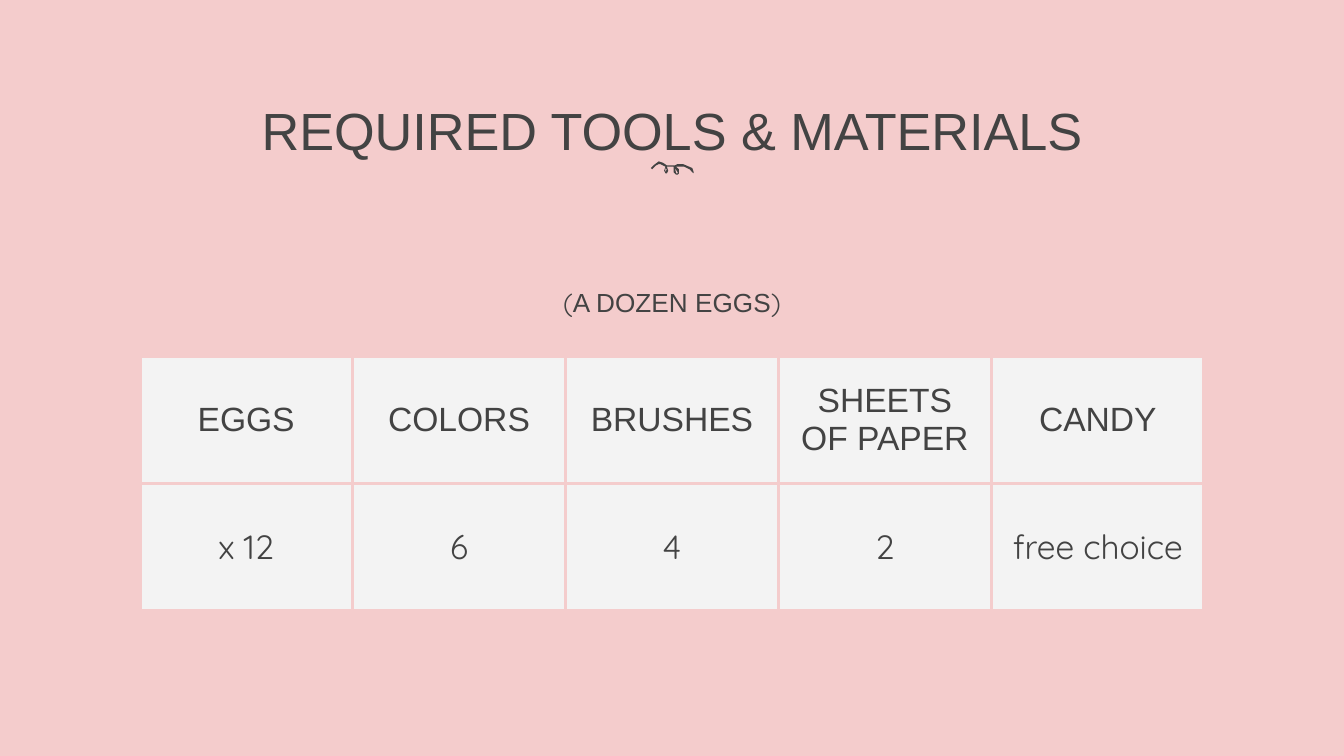
import pptx
import pptx.dml.color
import pptx.enum.text
import pptx.oxml
import pptx.oxml.ns
import pptx.util

Cm = pptx.util.Cm
Pt = pptx.util.Pt
RGBColor = pptx.dml.color.RGBColor
PP_ALIGN = pptx.enum.text.PP_ALIGN
ANCHOR = pptx.enum.text.MSO_ANCHOR
AUTO_SIZE = pptx.enum.text.MSO_AUTO_SIZE

PINK = RGBColor(0xF4, 0xCC, 0xCC)
CHARCOAL = RGBColor(0x43, 0x43, 0x43)
PALE_GREY = RGBColor(0xF3, 0xF3, 0xF3)
HEADING_FONT = "Arial"
BODY_FONT = "Quicksand"
INSET = Cm(0.25)

ROWS = [
    ["EGGS", "COLORS", "BRUSHES", "SHEETS OF PAPER", "CANDY"],
    ["x 12", "6", "4", "2", "free choice"],
]
ROW_FONTS = [HEADING_FONT, BODY_FONT]

SWIRL_WIDTH = 32
SWIRL_CONTOURS = [
    [(32, 9), (32, 8), (31, 5), (24, 2), (20, 2), (18, 3), (13, 3), (12, 3),
     (9, 1), (6, 0), (2, 3), (0, 5), (1, 6), (2, 5), (4, 3), (6, 2), (7, 2),
     (11, 4), (10, 7), (11, 9), (12, 9), (13, 7), (12, 4), (14, 4), (17, 4),
     (17, 8), (19, 10), (20, 10), (21, 9), (21, 6), (19, 4), (20, 4),
     (25, 4), (29, 6), (31, 8)],
    [(20, 9), (19, 9), (18, 5), (20, 8)],
    [(11, 8), (11, 5), (11.5, 6.5)],
]


def set_attrs(obj, values):
    for name, value in values.items():
        setattr(obj, name, value)


def write_runs(tf, runs, size):
    p = tf.paragraphs[0]
    p.alignment = PP_ALIGN.CENTER
    for text, font in runs:
        r = p.add_run()
        r.text = text
        set_attrs(r.font, {"name": font, "size": Pt(size)})
        r.font.color.rgb = CHARCOAL


def format_frame(tf, top_inset):
    set_attrs(tf, {
        "word_wrap": True, "auto_size": AUTO_SIZE.NONE,
        "vertical_anchor": ANCHOR.TOP,
        "margin_left": INSET, "margin_right": INSET,
        "margin_top": top_inset, "margin_bottom": 0,
    })


def place_title(s, left, top, width, height):
    sp = s.shapes.title
    set_attrs(sp, {"left": left, "top": top, "width": width, "height": height})
    format_frame(sp.text_frame, Cm(0.36))
    write_runs(sp.text_frame, [("REQUIRED TOOLS & MATERIALS", HEADING_FONT)], 28)


def add_swirl(s, left, top, width):
    first, *holes = SWIRL_CONTOURS
    fb = s.shapes.build_freeform(*first[0], scale=width / SWIRL_WIDTH)
    fb.add_line_segments(first[1:], close=True)
    for hole in holes:
        fb.move_to(*hole[0])
        fb.add_line_segments(hole[1:], close=True)
    sp = fb.convert_to_shape(left, top)
    sp.shadow.inherit = False
    sp.fill.solid()
    sp.fill.fore_color.rgb = CHARCOAL
    sp.line.fill.background()


def add_subtitle(s, left, top, width, height):
    tf = s.shapes.add_textbox(left, top, width, height).text_frame
    format_frame(tf, INSET)
    runs = [("(", BODY_FONT), ("A DOZEN EGGS", HEADING_FONT), (")", BODY_FONT)]
    write_runs(tf, runs, 14)


def add_borders(cell):
    tc_pr = cell._tc.get_or_add_tcPr()
    for i, side in enumerate(("lnL", "lnR", "lnT", "lnB")):
        tc_pr.insert(i, pptx.oxml.parse_xml(
            f'<a:{side} {pptx.oxml.ns.nsdecls("a")} w="{Pt(2.25)}">'
            f'<a:solidFill><a:srgbClr val="{PINK}"/></a:solidFill></a:{side}>'))


def add_materials_table(s, left, top, width, height):
    table = s.shapes.add_table(
        len(ROWS), len(ROWS[0]), left, top, width, height).table
    set_attrs(table, {"first_row": False, "horz_banding": False})
    for i, (row, font) in enumerate(zip(ROWS, ROW_FONTS)):
        for j, text in enumerate(row):
            cell = table.cell(i, j)
            set_attrs(cell, {
                "vertical_anchor": ANCHOR.MIDDLE,
                "margin_left": INSET, "margin_right": INSET,
                "margin_top": INSET, "margin_bottom": INSET,
            })
            cell.fill.solid()
            cell.fill.fore_color.rgb = PALE_GREY
            add_borders(cell)
            write_runs(cell.text_frame, [(text, font)], 18)


def main():
    prs = pptx.Presentation()
    set_attrs(prs, {"slide_width": Cm(25.4), "slide_height": Cm(14.29)})
    s = prs.slides.add_slide(prs.slide_layouts[5])
    s.background.fill.solid()
    s.background.fill.fore_color.rgb = PINK
    place_title(s, Cm(2), Cm(1.5), Cm(21.4), Cm(1.32))
    add_materials_table(s, Cm(2.64), Cm(6.73), Cm(20.12), Cm(4.82))
    add_subtitle(s, Cm(8.13), Cm(5.16), Cm(9.14), Cm(0.81))
    add_swirl(s, Cm(12.3), Cm(3.05), Cm(0.81))
    prs.save("out.pptx")


if __name__ == "__main__":
    main()
